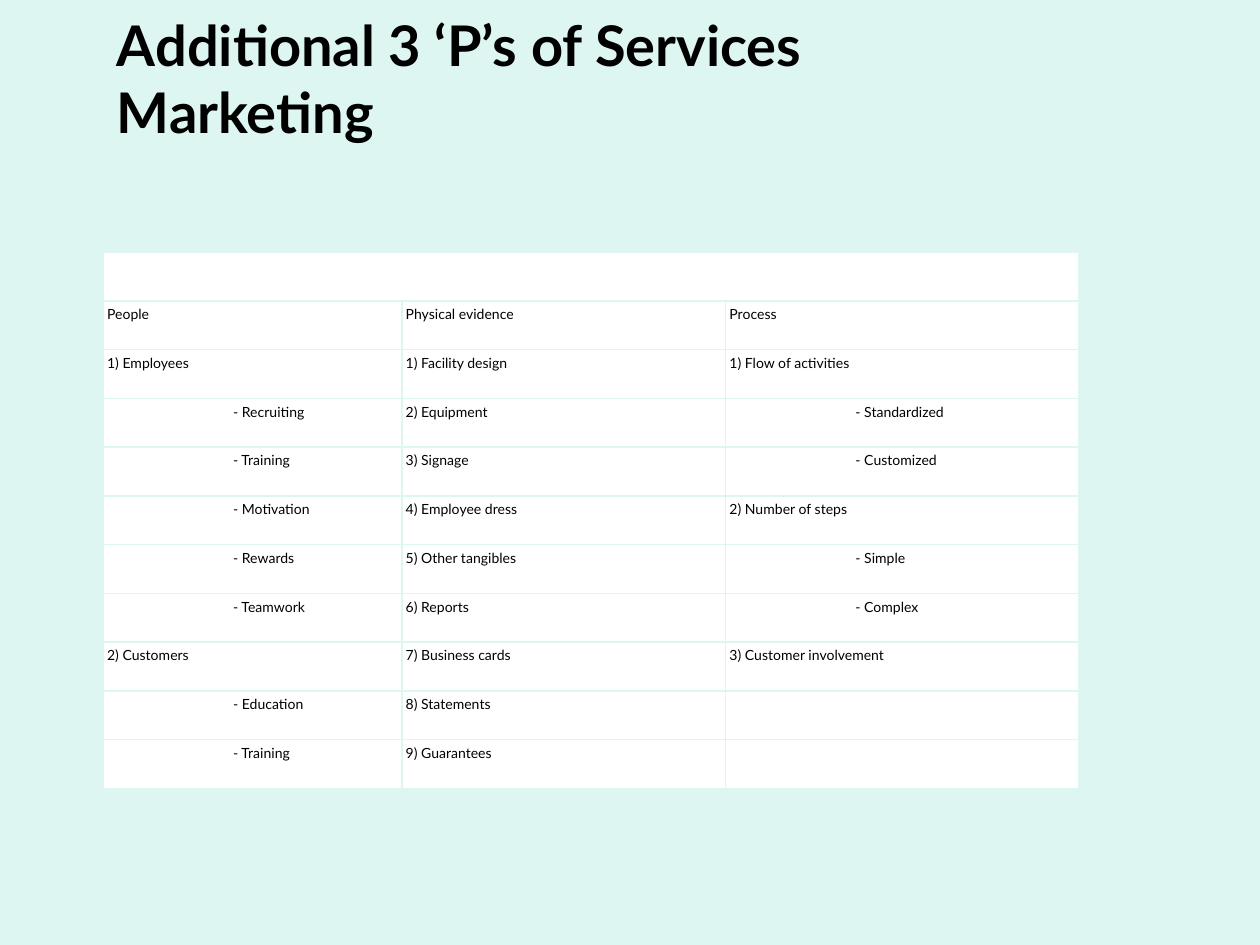
from lxml import etree
from pptx import Presentation
from pptx.dml.color import RGBColor
from pptx.enum.text import MSO_ANCHOR
from pptx.oxml.ns import qn
from pptx.util import Inches, Pt

TOP = MSO_ANCHOR.TOP
BLANK_LAYOUT = 6
FONT = "Lato"
MINT, WHITE, BLACK = "DEF6F1", "FFFFFF", "000000"

TITLE = "Additional 3 ‘P’s of Services Marketing"
TITLE_BOX = (0.83, 0, 7.5, 1.75)
TITLE_FORMAT = {"name": FONT, "size": Pt(32), "bold": True}
TITLE_FRAME = {"word_wrap": True, "vertical_anchor": TOP, "margin_top": Inches(0.08)}

TABLE_BOX = (0.82, 2, 7.74, 4.26)
COLUMN_WIDTHS = (2.37, 2.57, 2.8)
CELL_FORMAT = {"name": FONT, "size": Pt(8), "bold": False}
CELL_PARAGRAPH = {"line_spacing": 1.07, "space_after": Pt(8)}
CELL_MARGINS = dict.fromkeys(
    ("margin_left", "margin_top", "margin_right", "margin_bottom"), Inches(0.03)
)
SUBITEM_INDENT = Inches(1)
COLUMNS = (
    ("People", "1) Employees", "- Recruiting", "- Training", "- Motivation",
     "- Rewards", "- Teamwork", "2) Customers", "- Education", "- Training"),
    ("Physical evidence", "1) Facility design", "2) Equipment", "3) Signage",
     "4) Employee dress", "5) Other tangibles", "6) Reports",
     "7) Business cards", "8) Statements", "9) Guarantees"),
    ("Process", "1) Flow of activities", "- Standardized", "- Customized",
     "2) Number of steps", "- Simple", "- Complex",
     "3) Customer involvement", "", ""),
)


def color(hex_value):
    return RGBColor.from_string(hex_value)


def apply_format(target, values):
    for name, value in values.items():
        setattr(target, name, value)


def add_text(para, text, text_format):
    span = para.add_run()
    span.text = text
    apply_format(span.font, text_format)
    span.font.color.rgb = color(BLACK)


def add_borders(cell, hex_value, width):
    """Draw all four sides; borders must precede the fill in the cell's XML."""
    properties = cell._tc.get_or_add_tcPr()
    for position, side in enumerate(("a:lnL", "a:lnR", "a:lnT", "a:lnB")):
        line = etree.Element(qn(side), w=str(width))
        fill = etree.SubElement(line, qn("a:solidFill"))
        etree.SubElement(fill, qn("a:srgbClr"), val=hex_value)
        properties.insert(position, line)


def add_title(page, box):
    frame = page.shapes.add_textbox(*map(Inches, box)).text_frame
    apply_format(frame, TITLE_FRAME)
    add_text(frame.paragraphs[0], TITLE, TITLE_FORMAT)


def fill_cell(cell, text):
    para = cell.text_frame.paragraphs[0]
    apply_format(para, CELL_PARAGRAPH)
    if text.startswith("-"):
        para._p.get_or_add_pPr().set("marL", str(SUBITEM_INDENT))
    if text:
        add_text(para, text, CELL_FORMAT)


def add_marketing_table(page, box):
    row_count = len(COLUMNS[0]) + 1
    table = page.shapes.add_table(
        row_count, len(COLUMNS), *map(Inches, box)
    ).table
    table.first_row = table.horz_banding = False
    for column, width in zip(table.columns, COLUMN_WIDTHS):
        column.width = Inches(width)
    for cell in table.iter_cells():
        apply_format(cell, CELL_MARGINS)
        cell.fill.solid()
        cell.fill.fore_color.rgb = color(WHITE)
        add_borders(cell, MINT, Pt(1))
    table.cell(0, 0).merge(table.cell(0, len(COLUMNS) - 1))
    for column_index, entries in enumerate(COLUMNS):
        for row_index, text in enumerate(entries, start=1):
            fill_cell(table.cell(row_index, column_index), text)


def main():
    deck = Presentation()
    deck.slide_width, deck.slide_height = Inches(10), Inches(7.5)
    page = deck.slides.add_slide(deck.slide_layouts[BLANK_LAYOUT])
    page.background.fill.solid()
    page.background.fill.fore_color.rgb = color(MINT)
    add_title(page, TITLE_BOX)
    add_marketing_table(page, TABLE_BOX)
    deck.save("out.pptx")


if __name__ == "__main__":
    main()
